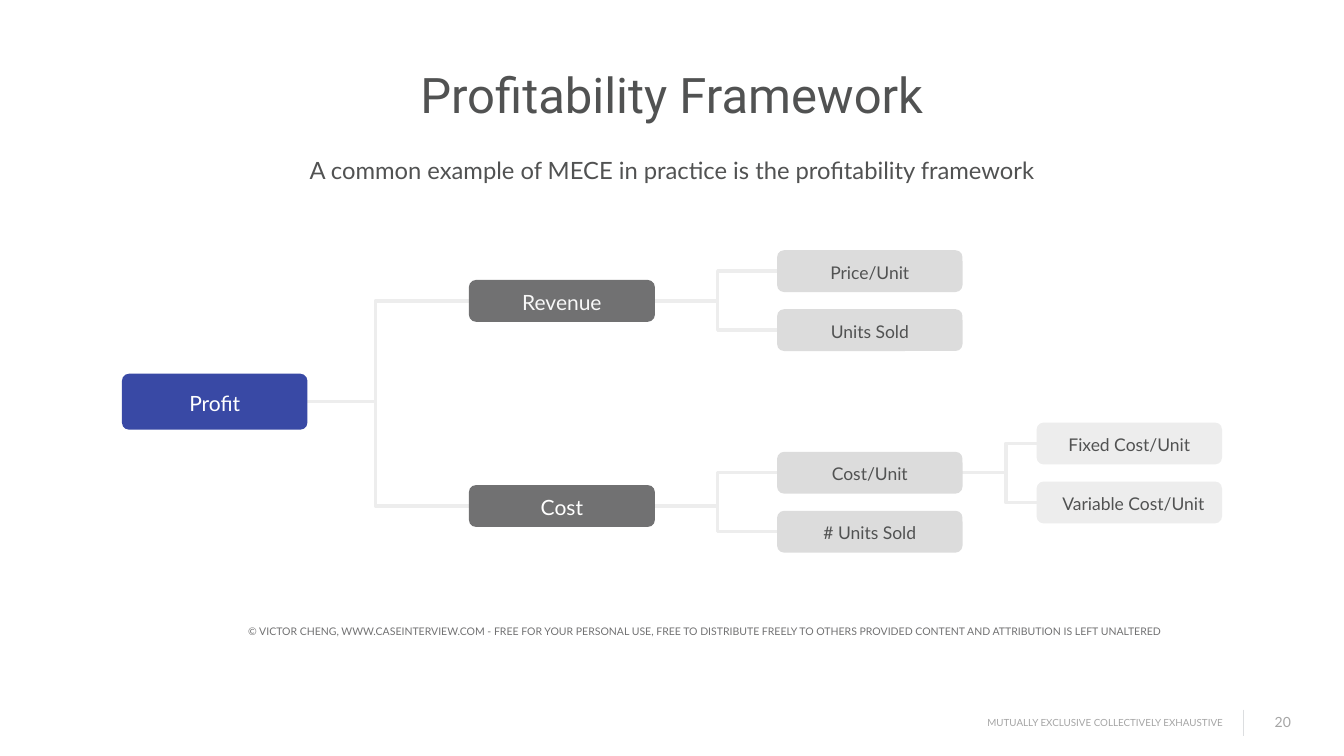
from dataclasses import dataclass

from lxml.etree import SubElement
from pptx import Presentation
from pptx.dml.color import RGBColor
from pptx.enum.shapes import MSO_CONNECTOR, MSO_SHAPE
from pptx.enum.text import MSO_ANCHOR, PP_ALIGN
from pptx.oxml.ns import qn
from pptx.util import Pt

PX = 9144  # EMU per px, 100 px to the inch

WHITE = RGBColor(0xFF, 0xFF, 0xFF)
OFF_WHITE = RGBColor(0xF8, 0xF8, 0xF8)
PALE = RGBColor(0xED, 0xED, 0xED)
SILVER = RGBColor(0xDC, 0xDC, 0xDC)
RULE = RGBColor(0xDC, 0xDE, 0xE0)
LIGHT_TEXT = RGBColor(0xA5, 0xA5, 0xA5)
GREY = RGBColor(0x71, 0x71, 0x72)
DARK = RGBColor(0x51, 0x52, 0x52)
BLUE = RGBColor(0x39, 0x49, 0xA5)


@dataclass(frozen=True)
class Level:
    """One column of the tree; trunk is the x where its branches split."""
    cx: int
    height: int
    radius: float
    fill: RGBColor
    color: RGBColor
    size: int
    trunk: int = 0
    width: int = 368


@dataclass(frozen=True)
class Node:
    text: str
    level: Level
    cy: int
    parent: str = ""
    color: RGBColor | None = None
    shift: int = 0


@dataclass(frozen=True)
class Label:
    text: str
    box: tuple[int, int, int, int]
    size: int
    color: RGBColor
    font: str = "Lato"
    align: PP_ALIGN = PP_ALIGN.CENTER
    anchor: MSO_ANCHOR = MSO_ANCHOR.TOP
    spacing: float = 1.0
    inset: int = 6
    wrap: bool = True


ROOT = Level(426, 111, 0.125, BLUE, WHITE, 30, 745)
BRANCH = Level(1115, 83, 0.167, GREY, WHITE, 30, 1424, 369)
DRIVER = Level(1726, 83, 0.167, SILVER, DARK, 25, 1996)
DETAIL = Level(2241, 83, 0.167, PALE, DARK, 25)

NODES = [
    Node("Profit", ROOT, 797),
    Node("Revenue", BRANCH, 597, "Profit", OFF_WHITE),
    Node("Cost", BRANCH, 1004, "Profit"),
    Node("Price/Unit", DRIVER, 538, "Revenue"),
    Node("Units Sold", DRIVER, 655, "Revenue"),
    Node("Cost/Unit", DRIVER, 938, "Cost"),
    Node("# Units Sold", DRIVER, 1055, "Cost"),
    Node("Fixed Cost/Unit", DETAIL, 880, "Cost/Unit"),
    Node("Variable Cost/Unit", DETAIL, 997, "Cost/Unit", shift=8),
]

LABELS = [
    Label("Profitability Framework", (222, 122, 2222, 151), 70, DARK, "Roboto"),
    Label("A common example of MECE in practice is the profitability framework",
          (416, 275, 1835, 67), 34, DARK, spacing=1.5),
    Label("© VICTOR CHENG, WWW.CASEINTERVIEW.COM - FREE FOR YOUR PERSONAL USE, "
          "FREE TO DISTRIBUTE FREELY TO OTHERS PROVIDED CONTENT AND ATTRIBUTION "
          "IS LEFT UNALTERED",
          (285, 1233, 2228, 36), 15, GREY, anchor=MSO_ANCHOR.MIDDLE, spacing=1.1),
    Label("MUTUALLY EXCLUSIVE COLLECTIVELY EXHAUSTIVE", (1943, 1412, 494, 44), 14,
          LIGHT_TEXT, align=PP_ALIGN.RIGHT, anchor=MSO_ANCHOR.MIDDLE, inset=10,
          wrap=False),
    Label("20", (2523, 1410, 45, 44), 20, LIGHT_TEXT, wrap=False),
]


def set_all(obj, values: dict) -> None:
    for name, value in values.items():
        setattr(obj, name, value)


def write(sp, text: str, size: int, color: RGBColor, font: str, align: PP_ALIGN,
          spacing: float, frame: dict) -> None:
    tf = sp.text_frame
    set_all(tf, frame)
    p = tf.paragraphs[0]
    set_all(p, {"alignment": align, "line_spacing": spacing})
    r = p.add_run()
    r.text = text
    set_all(r.font, {"name": font, "size": Pt(size)})
    r.font.color.rgb = color


def margins(inset: int, shift: int = 0) -> dict:
    """Equal insets; shift moves centred text to the right."""
    return {"margin_left": (inset + 2 * shift) * PX, "margin_right": inset * PX,
            "margin_top": inset * PX, "margin_bottom": inset * PX}


def add_label(s, label: Label) -> None:
    sp = s.shapes.add_textbox(*(v * PX for v in label.box))
    frame = {"word_wrap": label.wrap, "vertical_anchor": label.anchor,
             **margins(label.inset)}
    write(sp, label.text, label.size, label.color, label.font, label.align,
          label.spacing, frame)


def add_line(s, kind: MSO_CONNECTOR, start: tuple[int, int], end: tuple[int, int],
             color: RGBColor, width: float):
    line = s.shapes.add_connector(kind, *(v * PX for v in (*start, *end)))
    line.line.color.rgb = color
    line.line.width = Pt(width)
    SubElement(line._element.spPr, qn("a:effectLst"))
    return line


def add_branch(s, parent: Node, child: Node) -> None:
    x0, x1 = parent.level.cx, child.level.cx
    line = add_line(s, MSO_CONNECTOR.ELBOW, (x0, parent.cy), (x1, child.cy), PALE, 5)
    bend = round((parent.level.trunk - x0) / (x1 - x0) * 100000)
    geometry = line._element.spPr.find(qn("a:prstGeom"))
    guides = geometry.find(qn("a:avLst"))
    if guides is None:
        guides = SubElement(geometry, qn("a:avLst"))
    SubElement(guides, qn("a:gd"), name="adj1", fmla=f"val {bend}")


def add_node(s, node: Node) -> None:
    lv = node.level
    sp = s.shapes.add_shape(
        MSO_SHAPE.ROUNDED_RECTANGLE, round((lv.cx - lv.width / 2) * PX),
        round((node.cy - lv.height / 2) * PX), lv.width * PX, lv.height * PX)
    sp.adjustments[0] = lv.radius
    sp.shadow.inherit = False
    sp.fill.solid()
    sp.fill.fore_color.rgb = lv.fill
    sp.line.fill.background()
    frame = {"word_wrap": True, "vertical_anchor": MSO_ANCHOR.MIDDLE,
             **margins(5, node.shift)}
    write(sp, node.text, lv.size, node.color or lv.color, "Lato", PP_ALIGN.CENTER,
          1.1, frame)


def main() -> None:
    prs = Presentation()
    set_all(prs, {"slide_width": 2667 * PX, "slide_height": 1500 * PX})
    s = prs.slides.add_slide(prs.slide_layouts[6])

    by_text = {node.text: node for node in NODES}
    for node in NODES:
        if node.parent:
            add_branch(s, by_text[node.parent], node)
    for node in NODES:
        add_node(s, node)
    for label in LABELS:
        add_label(s, label)
    add_line(s, MSO_CONNECTOR.STRAIGHT, (2466, 1408), (2466, 1460), RULE, 0.5)

    prs.save("out.pptx")


if __name__ == "__main__":
    main()
